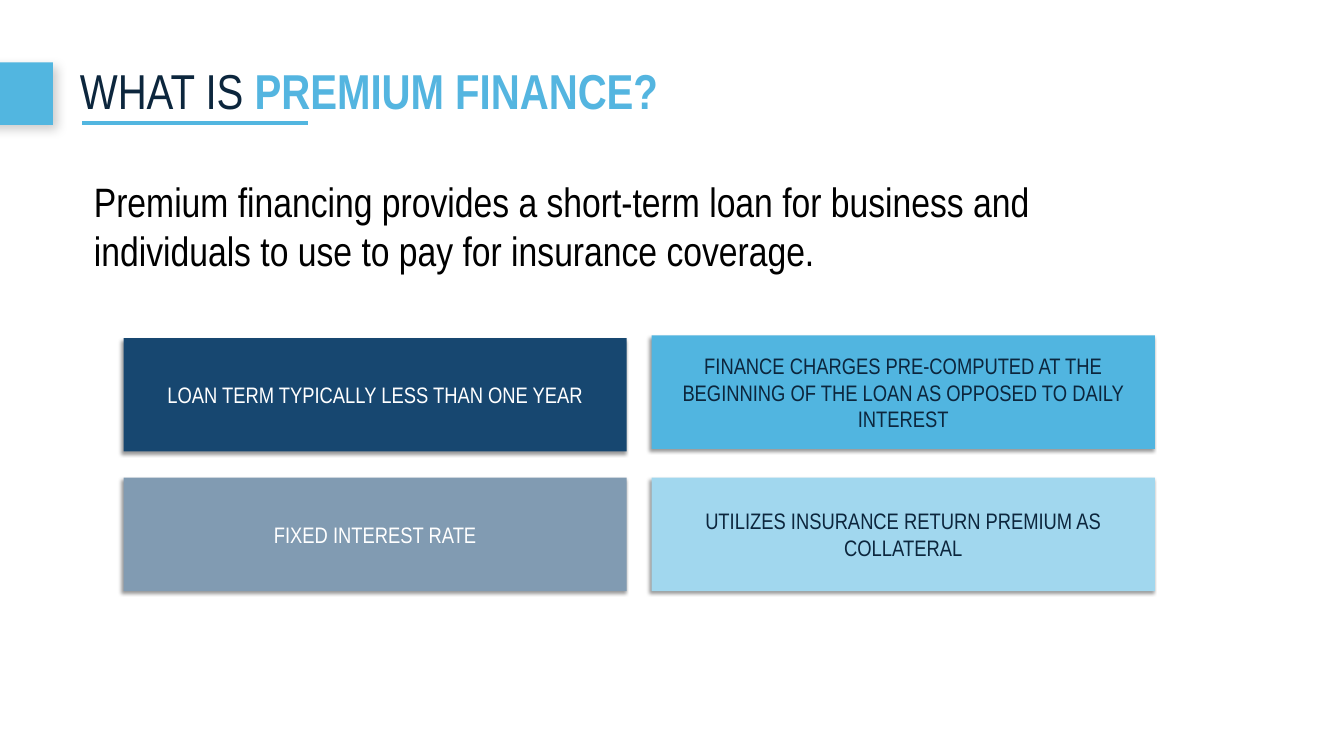
from lxml.etree import SubElement
from pptx import Presentation
from pptx.dml.color import RGBColor
from pptx.enum.shapes import MSO_CONNECTOR, MSO_SHAPE
from pptx.enum.text import MSO_ANCHOR as Anchor, MSO_AUTO_SIZE as AutoSize, PP_ALIGN as Align
from pptx.oxml.ns import qn
from pptx.util import Cm, Pt

# Content
COLORS = {
    "navy": "0C263D", "sky": "54B5E0", "accent": "52B6E0", "white": "FFFFFF",
    "black": "000000", "deep": "174770", "bright": "51B5E0", "slate": "819BB2",
    "pale": "A1D7EE",
}
FONT = "Arial Narrow"
TITLE = [("WHAT IS ", "navy", False), ("PREMIUM FINANCE?", "sky", True)]
INTRO = ("Premium financing provides a short-term loan for business and "
         "individuals to use to pay for insurance coverage.")
# Text, fill, text colour, vertical offset from the grid (cm)
FEATURES = [
    ("LOAN TERM TYPICALLY LESS THAN ONE YEAR", "deep", "white", 0),
    ("FINANCE CHARGES PRE-COMPUTED AT THE BEGINNING OF THE LOAN AS OPPOSED "
     "TO DAILY INTEREST", "bright", "navy", -0.1),
    ("FIXED INTEREST RATE", "slate", "white", 0),
    ("UTILIZES INSURANCE RETURN PREMIUM AS COLLATERAL", "pale", "navy", 0),
]

# Feature grid in cm
COLUMNS = 2
GRID_LEFT, GRID_TOP = 4.67, 12.78
BOX_WIDTH, BOX_HEIGHT = 19.02, 4.29
STEP_X, STEP_Y = 19.96, 5.28


def rgb(name):
    return RGBColor.from_string(COLORS[name])


def add_text(paragraph, text, size, color, bold=False, align=None):
    run = paragraph.add_run()
    run.text = text
    run.font.name = FONT
    run.font.size = Pt(size)
    run.font.bold = bold
    run.font.color.rgb = rgb(color)
    if align is not None:
        paragraph.alignment = align


def add_box(slide, left, top, width, height, fill, opacity, blur, distance, angle):
    """Add a filled rectangle with an outer shadow."""
    shape = slide.shapes.add_shape(
        MSO_SHAPE.RECTANGLE, Cm(left), Cm(top), Cm(width), Cm(height))
    shape.fill.solid()
    shape.fill.fore_color.rgb = rgb(fill)
    shape.line.fill.background()
    shape.shadow.inherit = False
    effects = shape.element.spPr.find(qn("a:effectLst"))
    shadow = SubElement(effects, qn("a:outerShdw"), blurRad=str(Pt(blur)),
                        dist=str(Pt(distance)), dir=str(angle * 60000),
                        algn="ctr", rotWithShape="0")
    color = SubElement(shadow, qn("a:srgbClr"), val=COLORS["black"])
    SubElement(color, qn("a:alpha"), val=str(opacity * 1000))
    return shape


def main():
    presentation = Presentation()
    presentation.slide_width, presentation.slide_height = Cm(50.8), Cm(28.58)
    slide = presentation.slides.add_slide(presentation.slide_layouts[5])

    # Accent block and title underline
    underline = slide.shapes.add_connector(
        MSO_CONNECTOR.STRAIGHT, Cm(3.1), Cm(4.65), Cm(11.66), Cm(4.65))
    underline.line.color.rgb = rgb("accent")
    underline.line.width = Pt(5)
    SubElement(underline.element.spPr, qn("a:effectLst"))
    add_box(slide, -1.3, 2.36, 3.3, 2.36, "accent",
            opacity=20, blur=12, distance=7, angle=45)

    # Title
    title = slide.shapes.title
    title.left, title.top, title.width, title.height = Cm(3.02), Cm(1.75), Cm(45.21), Cm(3.58)
    frame = title.text_frame
    frame.auto_size = AutoSize.NONE
    frame.vertical_anchor = Anchor.MIDDLE
    frame.margin_left = frame.margin_right = frame.margin_top = frame.margin_bottom = 0
    heading = frame.paragraphs[0]
    heading.line_spacing = 0.9
    for text, color, bold in TITLE:
        add_text(heading, text, size=52.5, color=color, bold=bold, align=Align.LEFT)

    # Feature boxes
    for index, (text, fill, color, offset) in enumerate(FEATURES):
        row, column = divmod(index, COLUMNS)
        box = add_box(slide, GRID_LEFT + column * STEP_X, GRID_TOP + row * STEP_Y + offset,
                      BOX_WIDTH, BOX_HEIGHT, fill,
                      opacity=40, blur=4, distance=3, angle=135)
        box.text_frame.word_wrap = True
        box.text_frame.vertical_anchor = Anchor.MIDDLE
        add_text(box.text_frame.paragraphs[0], text, size=24, color=color, align=Align.CENTER)

    # Introduction
    intro = slide.shapes.add_textbox(Cm(3.3), Cm(6.53), Cm(38.25), Cm(4.01))
    intro.text_frame.word_wrap = True
    intro.text_frame.auto_size = AutoSize.SHAPE_TO_FIT_TEXT
    add_text(intro.text_frame.paragraphs[0], INTRO, size=44, color="black")

    presentation.save("out.pptx")


if __name__ == "__main__":
    main()
